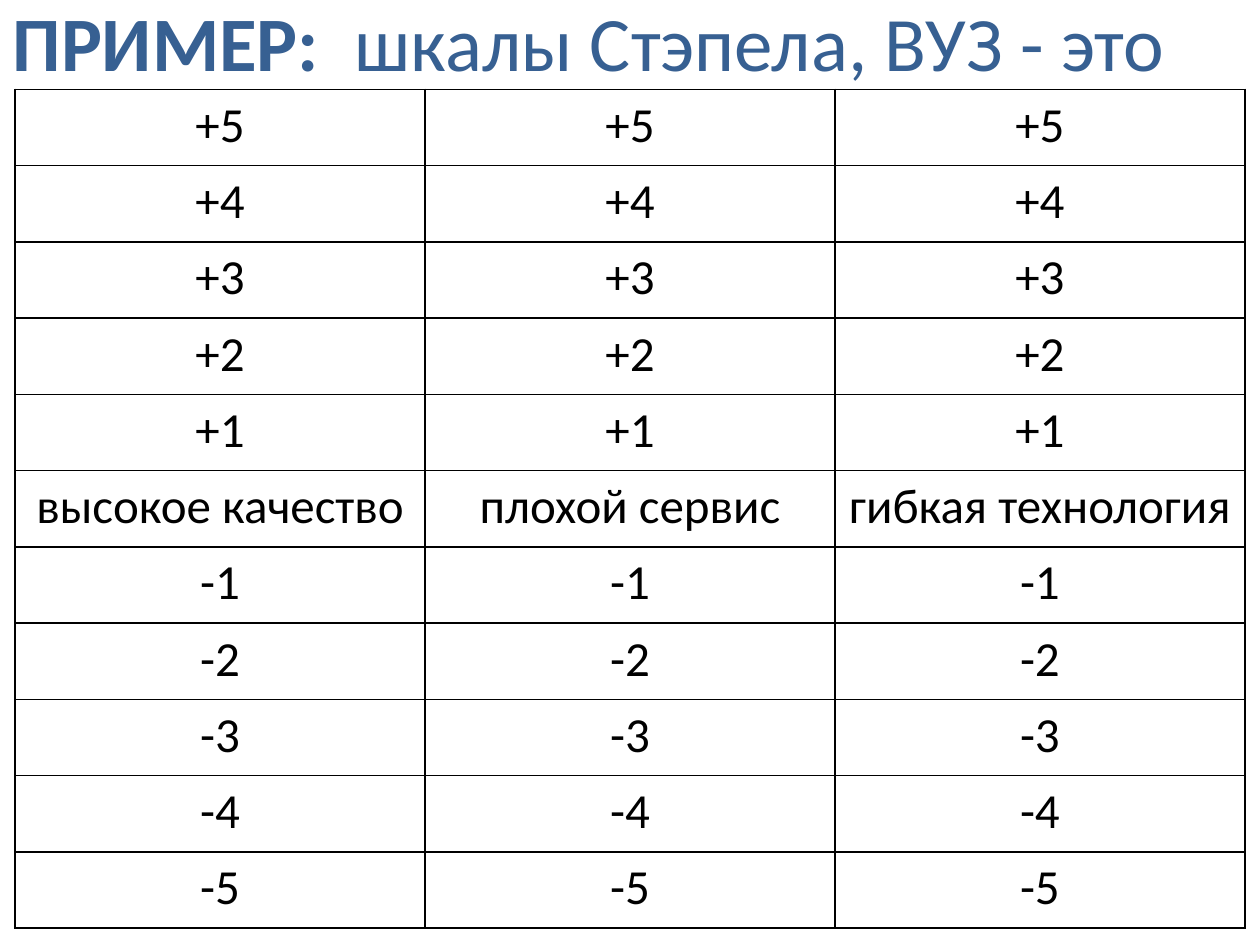
"""Build a slide with an example of the Stapel scale."""
import pptx
import pptx.dml.color
import pptx.enum.text
import pptx.oxml
import pptx.oxml.ns
import pptx.util
from pptx.util import Inches, Pt

TITLE = [("ПРИМЕР:  ", True), ("шкалы Стэпела, ВУЗ - это", False)]
TRAITS = ["высокое качество", "плохой сервис", "гибкая технология"]
TOP_SCORE = 5
COLORS = {"title": "376092", "text": "000000", "border": "000000"}
FONT = "Calibri"
TABLE_LEFT, TABLE_TOP, TABLE_WIDTH, TABLE_HEIGHT = 0.12, 0.71, 9.76, 6.66


def set_font(font, size, color):
    font.name = FONT
    font.size = Pt(size)
    font.color.rgb = pptx.dml.color.RGBColor.from_string(COLORS[color])


def add_borders(cell):
    properties = cell._tc.get_or_add_tcPr()
    for position, side in enumerate(("lnL", "lnR", "lnT", "lnB")):
        line = pptx.oxml.parse_xml(
            f'<a:{side} {pptx.oxml.ns.nsdecls("a")} w="{Pt(1)}"><a:solidFill>'
            f'<a:srgbClr val="{COLORS["border"]}"/></a:solidFill></a:{side}>'
        )
        properties.insert(position, line)


def add_title(page):
    title = page.shapes.title
    title.left, title.top = Inches(0), Inches(-0.01)
    title.width, title.height = Inches(10.12), Inches(1.43)
    frame = title.text_frame
    frame.word_wrap = True
    frame.auto_size = pptx.enum.text.MSO_AUTO_SIZE.NONE
    frame.vertical_anchor = pptx.enum.text.MSO_ANCHOR.TOP
    para = frame.paragraphs[0]
    para.alignment = pptx.enum.text.PP_ALIGN.LEFT
    para.line_spacing = 0.9
    set_font(para.font, 44, "title")
    for text, bold in TITLE:
        span = para.add_run()
        span.text = text
        span.font.bold = bold


def add_scale(page):
    scores = range(TOP_SCORE, 0, -1)
    rows = [[f"+{score}"] * len(TRAITS) for score in scores]
    rows.append(TRAITS)
    rows += [[f"-{score}"] * len(TRAITS) for score in reversed(scores)]
    table = page.shapes.add_table(
        len(rows), len(TRAITS), Inches(TABLE_LEFT), Inches(TABLE_TOP),
        Inches(TABLE_WIDTH), Inches(TABLE_HEIGHT),
    ).table
    table.first_row = False
    table.horz_banding = False
    for row_index, texts in enumerate(rows):
        for column_index, text in enumerate(texts):
            cell = table.cell(row_index, column_index)
            cell.text = text
            cell.fill.background()
            para = cell.text_frame.paragraphs[0]
            para.alignment = pptx.enum.text.PP_ALIGN.CENTER
            set_font(para.font, 28, "text")
            add_borders(cell)


def main():
    deck = pptx.Presentation()
    deck.slide_width, deck.slide_height = Inches(10), Inches(7.5)
    page = deck.slides.add_slide(deck.slide_layouts.get_by_name("Title Only"))
    add_title(page)
    add_scale(page)
    deck.save("out.pptx")


if __name__ == "__main__":
    main()
